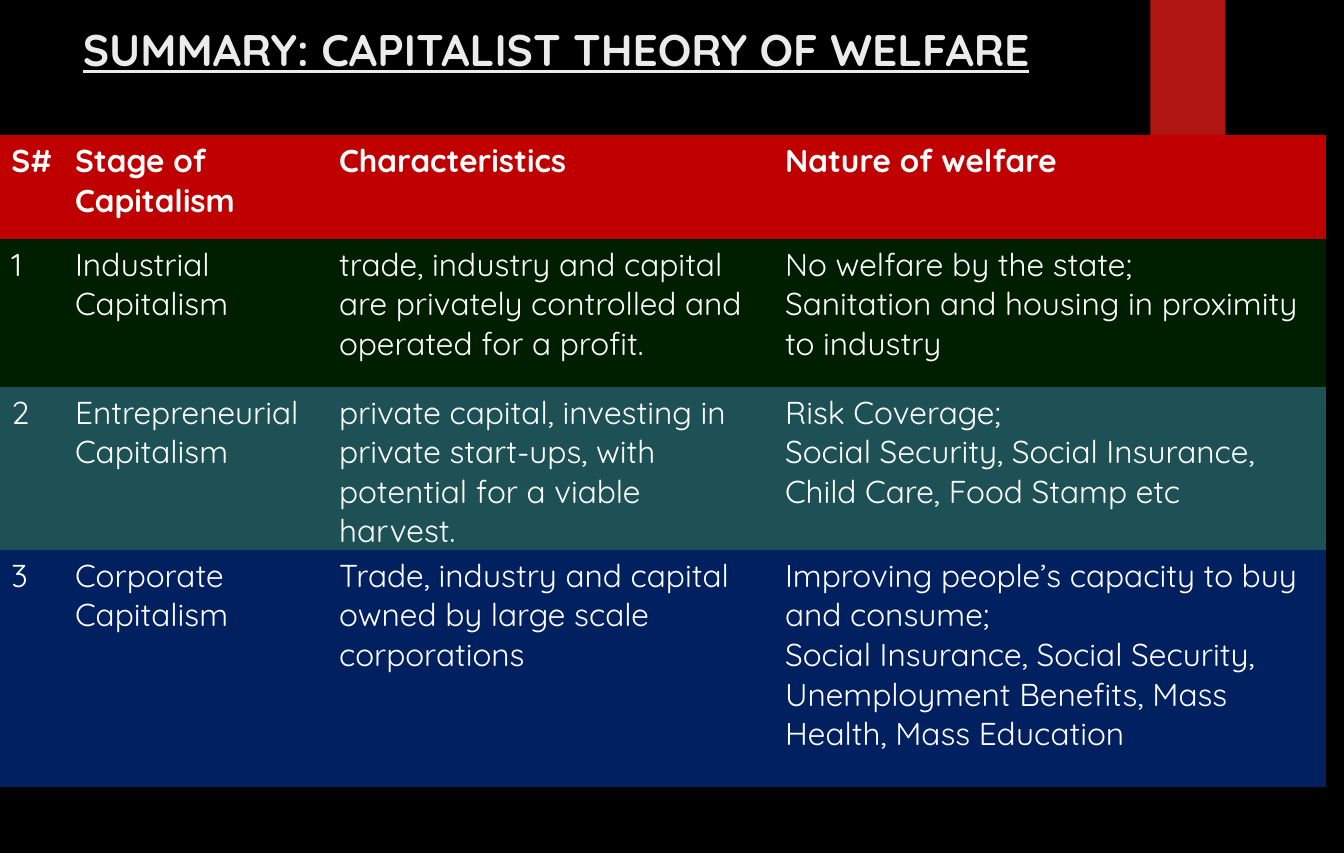
from lxml import etree
from pptx import Presentation
from pptx import util as u
from pptx.dml.color import RGBColor
from pptx.enum import shapes, text
from pptx.oxml.ns import qn

FONT = "Quicksand"
WIDTH, HEIGHT = u.Cm(30), u.Inches(7.5)
COLUMNS = [0.56, 2.32, 3.92, 4.85]
ROWS = [
    (0.91, "C00000", ["S#", "Stage of Capitalism", "Characteristics", "Nature of welfare"]),
    (1.3, "001E00", [
        "1", "Industrial Capitalism",
        "trade, industry and capital are privately controlled and operated for a profit.",
        "No welfare by the state;\nSanitation and housing in proximity to industry"]),
    (1.3, "1E5155", [
        "2", "Entrepreneurial Capitalism",
        "private capital, investing in private start-ups, with potential for a viable harvest.",
        "Risk Coverage;\nSocial Security, Social Insurance, Child Care, Food Stamp etc"]),
    (2.09, "002060", [
        "3", "Corporate Capitalism",
        "Trade, industry and capital owned by large scale corporations",
        "Improving people’s capacity to buy and consume;\nSocial Insurance, Social Security, "
        "Unemployment Benefits, Mass Health, Mass Education"]),
]


def paint(target, color):
    target.solid()
    target.fore_color.rgb = RGBColor.from_string(color)


def write(frame, words, size=20, color="FFFFFF", bold=False, underline=False):
    frame.word_wrap = True
    frame.vertical_anchor = text.MSO_ANCHOR.TOP
    for index, line in enumerate(words.split("\n")):
        para = frame.paragraphs[0] if index == 0 else frame.add_paragraph()
        para.alignment = text.PP_ALIGN.LEFT
        span = para.add_run()
        span.text = line
        font = span.font
        font.name, font.size = FONT, u.Pt(size)
        font.bold, font.underline = bold, underline
        paint(font.fill, color)


def clear_borders(cell):
    properties = cell._tc.get_or_add_tcPr()
    for index, side in enumerate(("a:lnL", "a:lnR", "a:lnT", "a:lnB")):
        border = etree.Element(qn(side), w="0")
        etree.SubElement(border, qn("a:noFill"))
        properties.insert(index, border)


def add_ribbon(page, box):
    ribbon = page.shapes.add_shape(shapes.MSO_SHAPE.RECTANGLE, *map(u.Inches, box))
    ribbon.shadow.inherit = False
    paint(ribbon.fill, "B01513")
    ribbon.line.fill.background()


def add_title(page, box):
    title = page.shapes.add_textbox(*map(u.Inches, box))
    write(title.text_frame, "SUMMARY: CAPITALIST THEORY OF WELFARE",
          size=28, color="EBEBEB", bold=True, underline=True)


def add_stages(page, box):
    left, top, width, height = box
    table = page.shapes.add_table(
        len(ROWS), len(COLUMNS), *map(u.Inches, box)).table
    for column, share in zip(table.columns, COLUMNS):
        column.width = u.Inches(width * share / sum(COLUMNS))
    total = sum(row[0] for row in ROWS)
    for index, (share, color, words) in enumerate(ROWS):
        table.rows[index].height = u.Inches(height * share / total)
        for cell, content in zip(table.rows[index].cells, words):
            paint(cell.fill, color)
            clear_borders(cell)
            write(cell.text_frame, content, bold=index == 0)


def build_summary(page):
    paint(page.background.fill, "000000")
    add_ribbon(page, (10.11, 0, 0.66, HEIGHT.inches / 6))
    add_title(page, (0.63, 0.15, 9.11, 0.52))
    add_stages(page, (0, 1.19, sum(COLUMNS), sum(row[0] for row in ROWS)))


def main():
    deck = Presentation()
    deck.slide_width, deck.slide_height = WIDTH, HEIGHT
    page = deck.slides.add_slide(deck.slide_layouts[6])
    build_summary(page)
    deck.save("out.pptx")


if __name__ == "__main__":
    main()
